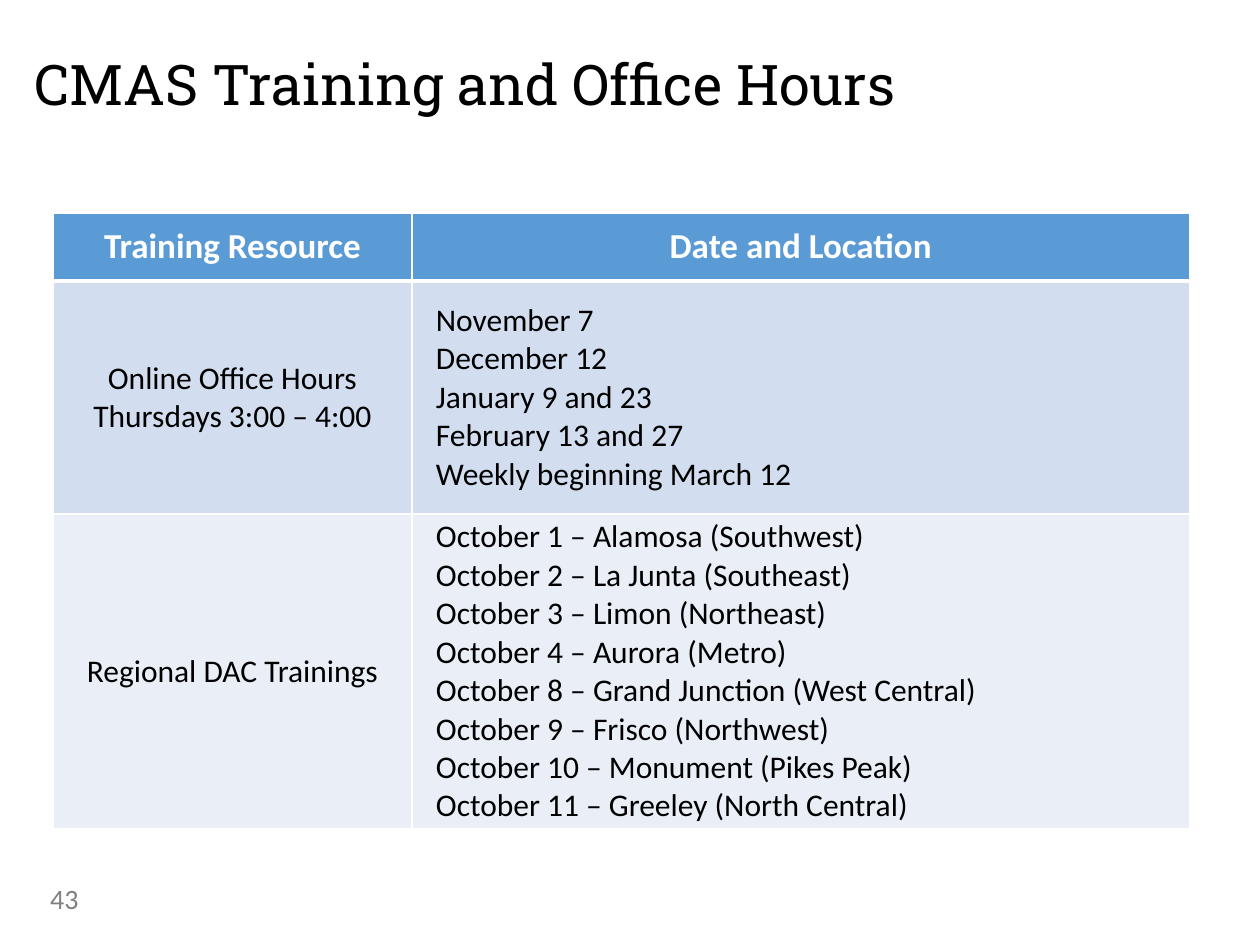
from lxml import etree
from pptx import Presentation
from pptx import util as u
from pptx.dml.color import RGBColor
from pptx.enum import text
from pptx.oxml import ns

BLACK = RGBColor(0x00, 0x00, 0x00)
WHITE = RGBColor(0xFF, 0xFF, 0xFF)
GRAY = RGBColor(0x80, 0x80, 0x80)
HEADER_BLUE = RGBColor(0x5B, 0x9B, 0xD5)
BAND_DARK = RGBColor(0xD2, 0xDE, 0xEF)
BAND_LIGHT = RGBColor(0xEA, 0xEF, 0xF7)

TITLE_FONT = "Roboto Slab"
BODY_FONT = "Calibri"

COLUMN_WIDTHS = [2.85, 6.17]
ROW_HEIGHTS = [0.54, 1.85, 2.5]
ROW_FILLS = [HEADER_BLUE, BAND_DARK, BAND_LIGHT]
ROWS = [
    (["Training Resource"], ["Date and Location"]),
    (
        ["Online Office Hours", "Thursdays 3:00 – 4:00"],
        [
            "November 7",
            "December 12",
            "January 9 and 23",
            "February 13 and 27",
            "Weekly beginning March 12",
        ],
    ),
    (
        ["Regional DAC Trainings"],
        [
            "October 1 – Alamosa (Southwest)",
            "October 2 – La Junta (Southeast)",
            "October 3 – Limon (Northeast)",
            "October 4 – Aurora (Metro)",
            "October 8 – Grand Junction (West Central)",
            "October 9 – Frisco (Northwest)",
            "October 10 – Monument (Pikes Peak)",
            "October 11 – Greeley (North Central)",
        ],
    ),
]


def style_font(font, name, size, color, bold=False):
    font.name = name
    font.size = u.Pt(size)
    font.color.rgb = color
    font.bold = bold


def style_paragraph(paragraph, *font_style):
    for run in paragraph.runs:
        style_font(run.font, *font_style)


def add_title(slide, wording):
    title = slide.shapes.title
    title.left, title.top = u.Inches(0.27), u.Inches(0.28)
    title.width, title.height = u.Inches(9.16), u.Inches(0.83)
    frame = title.text_frame
    frame.text = wording
    frame.margin_left = frame.margin_right = 0
    frame.margin_top = frame.margin_bottom = 0
    frame.vertical_anchor = text.MSO_ANCHOR.MIDDLE
    frame.auto_size = text.MSO_AUTO_SIZE.NONE
    paragraph = frame.paragraphs[0]
    paragraph.alignment = text.PP_ALIGN.LEFT
    paragraph.line_spacing = 0.9
    style_paragraph(paragraph, TITLE_FONT, 32, BLACK)


def add_page_number(slide, number):
    box = slide.shapes.add_textbox(
        u.Inches(0.3), u.Inches(6.95), u.Inches(0.51), u.Inches(0.4)
    )
    box.text_frame.word_wrap = True
    box.text_frame.text = number
    style_paragraph(box.text_frame.paragraphs[0], BODY_FONT, 16, GRAY)


def set_borders(cell, top, bottom):
    properties = cell._tc.get_or_add_tcPr()
    widths = {"lnL": 1, "lnR": 1, "lnT": top, "lnB": bottom}
    for index, (side, width) in enumerate(widths.items()):
        line = etree.Element(ns.qn(f"a:{side}"), w=str(u.Pt(width)))
        fill = etree.SubElement(line, ns.qn("a:solidFill"))
        etree.SubElement(fill, ns.qn("a:srgbClr"), val=str(WHITE))
        properties.insert(index, line)


def fill_cell(cell, lines, row, column):
    is_header = row == 0
    cell.fill.solid()
    cell.fill.fore_color.rgb = ROW_FILLS[row]
    cell.vertical_anchor = text.MSO_ANCHOR.MIDDLE
    cell.margin_left = cell.margin_right = u.Inches(0.07)
    cell.margin_top = cell.margin_bottom = 0
    cell.text_frame.text = "\n".join(lines)
    for paragraph in cell.text_frame.paragraphs:
        if is_header or column == 0:
            paragraph.alignment = text.PP_ALIGN.CENTER
        else:
            paragraph._p.get_or_add_pPr().set("marL", str(u.Inches(0.12)))
        if is_header:
            style_paragraph(paragraph, BODY_FONT, 20, WHITE, True)
        else:
            style_paragraph(paragraph, BODY_FONT, 18, BLACK)
    set_borders(cell, top=3 if row == 1 else 1, bottom=3 if is_header else 1)


def add_schedule(slide):
    table = slide.shapes.add_table(
        len(ROWS), len(COLUMN_WIDTHS),
        u.Inches(0.42), u.Inches(1.69),
        u.Inches(sum(COLUMN_WIDTHS)), u.Inches(sum(ROW_HEIGHTS)),
    ).table
    for column, width in zip(table.columns, COLUMN_WIDTHS):
        column.width = u.Inches(width)
    for row, height in zip(table.rows, ROW_HEIGHTS):
        row.height = u.Inches(height)
    for row, entries in enumerate(ROWS):
        for column, lines in enumerate(entries):
            fill_cell(table.cell(row, column), lines, row, column)


def main():
    presentation = Presentation()
    presentation.slide_width = u.Inches(10)
    presentation.slide_height = u.Inches(7.5)
    slide = presentation.slides.add_slide(presentation.slide_layouts[5])
    add_title(slide, "CMAS Training and Office Hours")
    add_page_number(slide, "43")
    add_schedule(slide)
    presentation.save("out.pptx")


if __name__ == "__main__":
    main()
